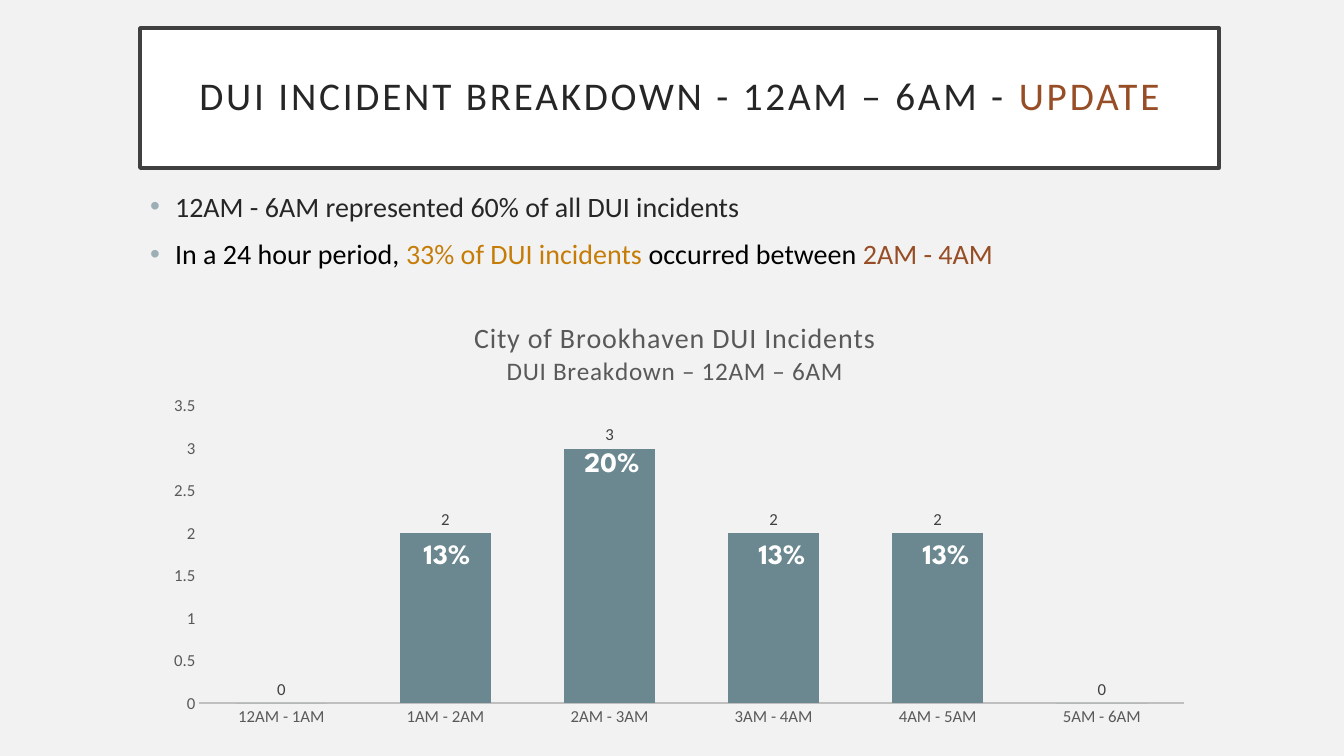
from lxml.etree import SubElement
from pptx import Presentation
from pptx.chart.data import CategoryChartData
from pptx.dml.color import RGBColor
from pptx.enum.chart import XL_CHART_TYPE as ChartType, XL_LABEL_POSITION as LabelPosition
from pptx.enum.chart import XL_TICK_MARK as TickMark
from pptx.enum.text import MSO_ANCHOR as Anchor, MSO_AUTO_SIZE as AutoSize, PP_ALIGN as Align
from pptx.oxml import parse_xml
from pptx.oxml.ns import nsdecls, qn
from pptx.util import Pt

PX = 914400 / 100.8
SLIDE_SIZE = (1344, 756)
BODY_FONT, LABEL_FONT = "Calibri", "League Spartan"
BACKGROUND, INK, RUST, AMBER = "F2F2F2", "262626", "974D25", "C67D08"
BAR, GREY, BULLET = "6B8891", "595959", "9BAFB5"

TITLE_BOX = (140, 28, 1079, 140)
TITLE = [("DUI INCIDENT BREAKDOWN - 12AM – 6AM - ", INK), ("UPDATE", RUST)]
BODY_BOX = (140, 184, 1079, 480)
BULLETS = [
    [("12AM - 6AM represented 60% of all DUI incidents", INK)],
    [("In a 24 hour period, ", "000000"), ("33% of DUI incidents ", AMBER),
     ("occurred between ", "000000"), ("2AM - 4AM", RUST)],
]
CHART_BOX = (152, 296, 1053, 439)
PLOT_BOX = (199, 406, 985, 297)
CHART_TITLE_AT = (471, 316)
CHART_TITLE = [("City of Brookhaven DUI Incidents", 20), ("DUI Breakdown – 12AM – 6AM", 18)]
INCIDENTS = {"12AM - 1AM": 0, "1AM - 2AM": 2, "2AM - 3AM": 3,
             "3AM - 4AM": 2, "4AM - 5AM": 2, "5AM - 6AM": 0}
SHARE_SIZE = (152, 69)
SHARES = [("13%", 371, 526), ("20%", 536, 434), ("13%", 706, 526), ("13%", 870, 526)]


def px(*lengths):
    return [round(length * PX) for length in lengths]


def rgb(color):
    return RGBColor.from_string(color)


def set_font(font, size, color, name=BODY_FONT, bold=False):
    font.size, font.name, font.bold = Pt(size), name, bold
    font.color.rgb = rgb(color)


def place(shape, box):
    shape.left, shape.top, shape.width, shape.height = px(*box)


def add_spans(para, spans, spacing=0):
    """Add coloured runs; spacing is letter spacing in hundredths of a point."""
    for text, color in spans:
        span = para.add_run()
        span.text = text
        span.font.color.rgb = rgb(color)
        if spacing:
            span._r.get_or_add_rPr().set("spc", str(spacing))


def add_bullet(para):
    properties = para._p.get_or_add_pPr()
    indent = px(25)[0]
    properties.set("marL", str(indent))
    properties.set("indent", str(-indent))
    color = SubElement(properties, qn("a:buClr"))
    SubElement(color, qn("a:srgbClr"), val=BULLET)
    SubElement(properties, qn("a:buFont"), typeface="Arial")
    SubElement(properties, qn("a:buChar"), char="•")


def set_layout(parent, index, box, target=""):
    """Fix a chart part at a box of slide px, given as fractions of the chart."""
    left, top, width, height = CHART_BOX
    fractions = [(box[0] - left) / width, (box[1] - top) / height]
    fractions += [length / whole for length, whole in zip(box[2:], (width, height))]
    for old in parent.findall(qn("c:layout")):
        parent.remove(old)
    layout = parse_xml(f"<c:layout {nsdecls('c')}><c:manualLayout/></c:layout>")
    values = [("layoutTarget", target)] if target else []
    values += [("xMode", "edge"), ("yMode", "edge")]
    values += [(name, f"{value:.3f}") for name, value in zip("xywh", fractions)]
    for name, value in values:
        SubElement(layout[0], qn(f"c:{name}"), val=value)
    parent.insert(index, layout)


def fill_title(shape):
    place(shape, TITLE_BOX)
    shape.fill.solid()
    shape.fill.fore_color.rgb = rgb("FFFFFF")
    shape.line.color.rgb = rgb("404040")
    shape.line.width = Pt(2.5)
    frame = shape.text_frame
    frame.auto_size, frame.vertical_anchor = AutoSize.NONE, Anchor.MIDDLE
    frame.margin_left = frame.margin_right = frame.margin_top = frame.margin_bottom = px(20)[0]
    para = frame.paragraphs[0]
    para.alignment, para.line_spacing = Align.CENTER, 0.9
    set_font(para.font, 28, INK)
    add_spans(para, TITLE, spacing=200)


def fill_body(shape):
    place(shape, BODY_BOX)
    frame = shape.text_frame
    frame.auto_size = AutoSize.NONE
    for number, spans in enumerate(BULLETS):
        para = frame.add_paragraph() if number else frame.paragraphs[0]
        para.space_before = Pt(10)
        add_bullet(para)
        set_font(para.font, 20, INK)
        add_spans(para, spans)


def add_incident_chart(slide):
    data = CategoryChartData()
    data.categories = list(INCIDENTS)
    data.add_series("Series 1", list(INCIDENTS.values()))
    chart = slide.shapes.add_chart(ChartType.COLUMN_CLUSTERED, *px(*CHART_BOX), data).chart
    set_font(chart.font, 10, "000000")
    chart.has_legend = False

    frame = chart.chart_title.text_frame
    for number, (text, size) in enumerate(CHART_TITLE):
        para = frame.add_paragraph() if number else frame.paragraphs[0]
        para.alignment = Align.CENTER
        set_font(para.font, size, GREY)
        add_spans(para, [(text, GREY)], spacing=50)
        set_font(para.runs[0].font, size, GREY)
    chart.chart_title.include_in_layout = False
    set_layout(chart.chart_title._element, 1, CHART_TITLE_AT)

    plot = chart.plots[0]
    plot.gap_width, plot.overlap, plot.vary_by_categories = 80, 25, False
    fill = plot.series[0].format.fill
    fill.solid()
    fill.fore_color.rgb = rgb(BAR)
    plot.has_data_labels = True
    labels = plot.data_labels
    labels.show_value, labels.position = True, LabelPosition.OUTSIDE_END
    set_font(labels.font, 12, "404040")
    set_layout(plot._element.getparent(), 0, PLOT_BOX, "inner")

    for axis in (chart.category_axis, chart.value_axis):
        axis.major_tick_mark = axis.minor_tick_mark = TickMark.NONE
        set_font(axis.tick_labels.font, 12, GREY)
    base_line = chart.category_axis.format.line
    base_line.color.rgb, base_line.width = rgb("BFBFBF"), Pt(1.25)
    value_axis = chart.value_axis
    value_axis.minimum_scale, value_axis.maximum_scale, value_axis.major_unit = 0, 3.5, 0.5
    value_axis.format.line.fill.background()
    grid = value_axis.major_gridlines.format.line
    grid.color.rgb, grid.width = rgb(BACKGROUND), Pt(0.75)


def add_share(slide, text, left, top):
    frame = slide.shapes.add_textbox(*px(left, top, *SHARE_SIZE)).text_frame
    frame.word_wrap = True
    para = frame.paragraphs[0]
    para.alignment, para.line_spacing = Align.CENTER, 1.15
    set_font(para.font, 20, "FFFFFF", LABEL_FONT, bold=True)
    para.add_run().text = text


def main():
    deck = Presentation()
    deck.slide_width, deck.slide_height = px(*SLIDE_SIZE)
    slide = deck.slides.add_slide(deck.slide_layouts[1])
    slide.background.fill.solid()
    slide.background.fill.fore_color.rgb = rgb(BACKGROUND)
    fill_title(slide.shapes.title)
    fill_body(slide.placeholders[1])
    add_incident_chart(slide)
    for share in SHARES:
        add_share(slide, *share)
    deck.save("out.pptx")


if __name__ == "__main__":
    main()
